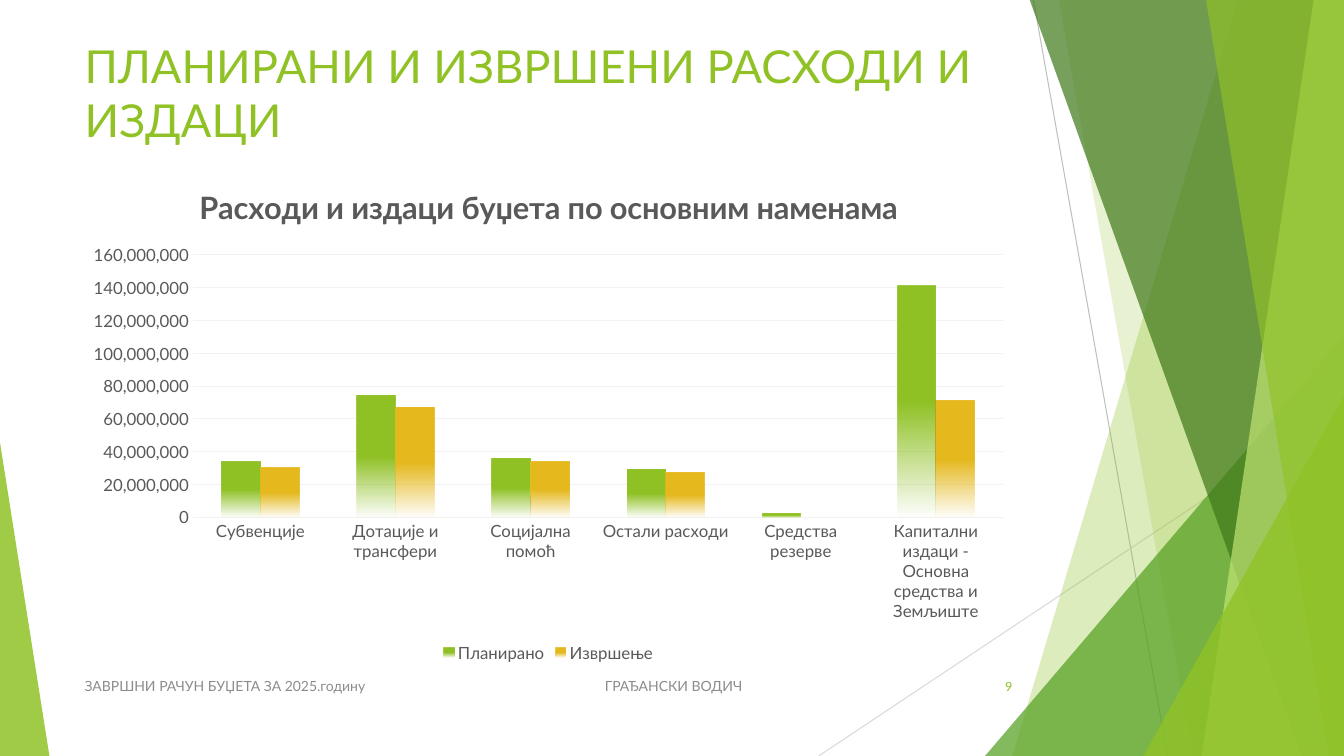
from lxml import etree
from pptx import Presentation
from pptx import util as u
from pptx.chart.data import CategoryChartData
from pptx.dml.color import RGBColor
from pptx.enum import chart as charts, shapes, text
from pptx.oxml import ns

GREEN, GOLD, GREY = "90C226", "E6B91E", "595959"


def color(hex_string):
    return RGBColor.from_string(hex_string)


def add_child(parent, tag, **attributes):
    child = etree.SubElement(parent, ns.qn(tag))
    for key, value in attributes.items():
        child.set(key, str(value))
    return child


def set_alpha(color_element, percent):
    add_child(color_element, "a:alpha", val=percent * 1000)


class Deck:
    font = "Lato"

    def __init__(self):
        self.prs = Presentation()
        self.prs.slide_width = u.Inches(13.33)
        self.prs.slide_height = u.Inches(7.5)
        self.slide = self.prs.slides.add_slide(self.prs.slide_layouts[5])
        self.shapes = self.slide.shapes

    def style(self, font, size, hex_string, bold=False):
        font.name, font.size, font.bold = self.font, u.Pt(size), bold
        font.color.rgb = color(hex_string)

    def line(self, start, end, hex_string):
        points = [u.Inches(v) for v in (*start, *end)]
        line = self.shapes.add_connector(shapes.MSO_CONNECTOR.STRAIGHT, *points)
        line.line.color.rgb = color(hex_string)
        line.line.width = u.Pt(0.75)
        add_child(line._element.spPr, "a:effectLst")

    def tint(self, shape, hex_string, alpha):
        shape.shadow.inherit = False
        shape.line.fill.background()
        shape.fill.solid()
        shape.fill.fore_color.rgb = color(hex_string)
        set_alpha(shape._element.spPr.find(".//" + ns.qn("a:srgbClr")), alpha)

    def band(self, top_left, bottom_left, hex_string, alpha):
        """Full-height band from a slanted left side to the right edge."""
        builder = self.shapes.build_freeform(
            u.Inches(top_left), u.Inches(-0.01), scale=1.0)
        corners = [(13.33, -0.01), (13.33, 7.5), (bottom_left, 7.5)]
        builder.add_line_segments(
            [(u.Inches(x), u.Inches(y)) for x, y in corners], close=True)
        self.tint(builder.convert_to_shape(), hex_string, alpha)

    def triangle(self, box, apex, hex_string, alpha):
        shape = self.shapes.add_shape(
            shapes.MSO_SHAPE.ISOSCELES_TRIANGLE, *map(u.Inches, box))
        shape.adjustments[0] = apex
        self.tint(shape, hex_string, alpha)

    def set_text(self, shape, words, size, hex_string,
                 align=text.PP_ALIGN.LEFT, tab=None):
        frame = shape.text_frame
        frame.word_wrap = True
        frame.auto_size = text.MSO_AUTO_SIZE.NONE
        frame.vertical_anchor = text.MSO_ANCHOR.MIDDLE
        paragraph = frame.paragraphs[0]
        paragraph.text = words
        paragraph.alignment = align
        if tab:
            tabs = add_child(paragraph._p.get_or_add_pPr(), "a:tabLst")
            add_child(tabs, "a:tab", pos=u.Inches(tab), algn="l")
        self.style(paragraph.font, size, hex_string)

    def title(self, box, words, size):
        title = self.shapes.title
        title.left, title.top, title.width, title.height = map(u.Inches, box)
        self.set_text(title, words, size, GREEN)

    def label(self, box, words, size, hex_string, **options):
        self.set_text(self.shapes.add_textbox(*map(u.Inches, box)),
                      words, size, hex_string, **options)

    def fade(self, fill, hex_string):
        """Solid in the upper half, fading out towards the bottom."""
        fill.gradient()
        fill.gradient_angle = 270
        for stop, position in zip(fill.gradient_stops, (0.5, 1)):
            stop.position = position
            stop.color.rgb = color(hex_string)
        colors = fill._xPr.findall(".//" + ns.qn("a:srgbClr"))
        set_alpha(colors[-1], 0)

    def column_chart(self, box, heading, categories, series, colors):
        data = CategoryChartData(number_format="#,##0")
        data.categories = categories
        for name, values in series.items():
            data.add_series(name, values)
        chart = self.shapes.add_chart(
            charts.XL_CHART_TYPE.COLUMN_CLUSTERED,
            *map(u.Inches, box), data).chart
        self.style(chart.font, 12, GREY)

        chart.has_title = True
        chart.chart_title.include_in_layout = False
        heading_paragraph = chart.chart_title.text_frame.paragraphs[0]
        heading_paragraph.text = heading
        self.style(heading_paragraph.font, 22, GREY, bold=True)

        chart.has_legend = True
        chart.legend.position = charts.XL_LEGEND_POSITION.BOTTOM
        chart.legend.include_in_layout = False
        self.style(chart.legend.font, 12, GREY)

        for axis in (chart.category_axis, chart.value_axis):
            axis.major_tick_mark = charts.XL_TICK_MARK.NONE
            axis.minor_tick_mark = charts.XL_TICK_MARK.NONE
            axis.format.line.fill.background()
            self.style(axis.tick_labels.font, 12, GREY)
        amounts = chart.value_axis
        amounts.minimum_scale, amounts.maximum_scale = 0, 160_000_000
        amounts.major_unit = 20_000_000
        amounts.tick_labels.number_format = "#,##0"
        amounts.tick_labels.number_format_is_linked = False
        amounts.major_gridlines.format.line.color.rgb = color("F2F2F2")
        amounts.major_gridlines.format.line.width = u.Pt(0.75)

        plot = chart.plots[0]
        plot.vary_by_categories = False
        plot.gap_width, plot.overlap = 150, 0
        for columns, hex_string in zip(plot.series, colors):
            columns.invert_if_negative = False
            self.fade(columns.format.fill, hex_string)


def main():
    deck = Deck()

    # Decoration at the right and left edges
    deck.line((10.25, 0), (11.58, 7.5), "BFBFBF")
    deck.line((13.33, 4.03), (8.12, 7.5), "D9D9D9")
    deck.band(12.28, 10.04, GREEN, 30)
    deck.band(10.5, 11.83, GREEN, 20)
    deck.triangle((9.77, 3.33, 3.56, 4.17), 1, "54A021", 72)
    deck.band(10.21, 12.91, "3F7819", 70)
    deck.band(13.03, 11.92, "C0E474", 70)
    deck.band(11.96, 13.18, GREEN, 65)
    deck.triangle((11.34, 3.93, 1.99, 3.57), 1, GREEN, 80)
    deck.triangle((0, 4.39, 0.49, 3.11), 0, GREEN, 85)

    # Title
    deck.title((0.74, 0.31, 9.4, 1.21),
               "ПЛАНИРАНИ И ИЗВРШЕНИ РАСХОДИ И ИЗДАЦИ", 32.4)

    # Planned and executed amounts, in millions
    planned = [34, 74, 36, 29, 2, 141]
    executed = [30, 67, 34, 27, 0, 71]
    deck.column_chart(
        (0.74, 1.63, 9.4, 4.98),
        "Расходи и издаци буџета по основним наменама",
        ["Субвенције", "Дотације и трансфери", "Социјална помоћ",
         "Остали расходи", "Средства резерве",
         "Капитални издаци - Основна средства и Земљиште"],
        {"Планирано": [v * 1_000_000 for v in planned],
         "Извршење": [v * 1_000_000 for v in executed]},
        [GREEN, GOLD])

    # Footer and slide number
    deck.label((9.39, 6.61, 0.75, 0.4), "9", 9, GREEN,
               align=text.PP_ALIGN.RIGHT)
    deck.label((0.74, 6.61, 6.89, 0.4),
               "ЗАВРШНИ РАЧУН БУЏЕТА ЗА 2025.годину\tГРАЂАНСКИ ВОДИЧ",
               10, "8C8C8C", tab=5.16)

    deck.prs.save("out.pptx")


if __name__ == "__main__":
    main()
